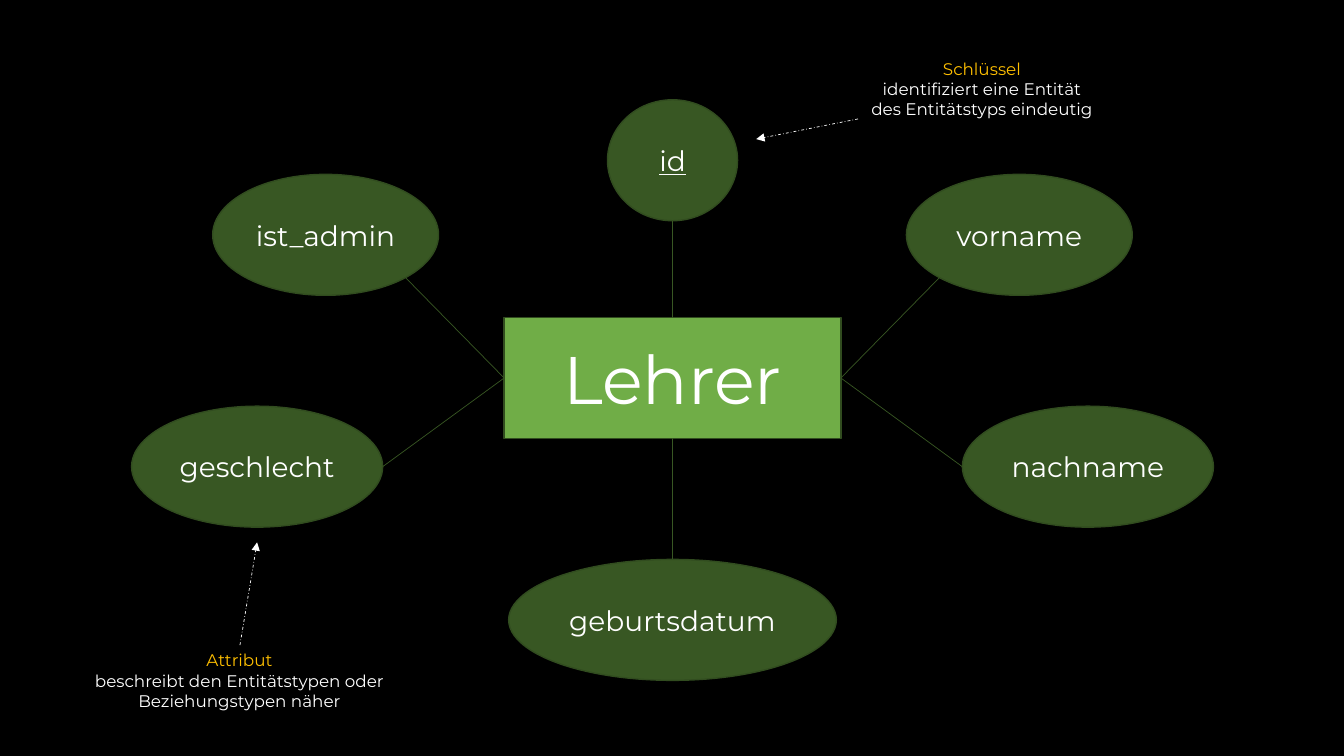
from math import cos, radians, sin

from pptx import Presentation
from pptx.dml.color import RGBColor
from pptx.enum.dml import MSO_LINE_DASH_STYLE as Dash
from pptx.enum.shapes import MSO_CONNECTOR as Connector, MSO_SHAPE as Shape
from pptx.enum.text import MSO_ANCHOR as Anchor, PP_ALIGN as Align
from pptx.oxml.ns import qn
from pptx.util import Inches, Pt
from lxml.etree import SubElement

# Content, lengths in inches
CENTER_X = 6.67
ENTITY = {"name": "Lehrer", "middle": 3.75, "width": 3.34}
BOX_HEIGHT = 1.2

# Name, offset from the center line, middle, width, is key,
# angle where the line leaves the ellipse (clockwise from the right), entity side
ATTRIBUTES = [
    ("id", 0, 1.59, 1.29, True, 90, "top"),
    ("vorname", 3.44, 2.33, 2.24, False, 135, "right"),
    ("geschlecht", -4.12, 4.63, 2.49, False, 0, "left"),
    ("geburtsdatum", 0, 6.15, 3.25, False, 270, "bottom"),
    ("nachname", 4.12, 4.63, 2.49, False, 180, "right"),
    ("ist_admin", -3.44, 2.33, 2.24, False, 45, "left"),
]

# Term, explanation, box (left, top, width, height), arrow start, arrow end
NOTES = [
    ("Attribut", "beschreibt den Entitätstypen oder Beziehungstypen näher",
     (0.25, 6.4, 4.25, 0.71), (2.38, 6.4), (2.55, 5.38)),
    ("Schlüssel", "identifiziert eine Entität des Entitätstyps eindeutig",
     (8.51, 0.53, 2.46, 0.71), (8.51, 1.18), (7.5, 1.38)),
]

THEME = {
    "font": "Montserrat",
    "background": RGBColor.from_string("000000"),
    "text": RGBColor.from_string("FFFFFF"),
    "term": RGBColor.from_string("FFC000"),
    "entity": RGBColor.from_string("70AD47"),
    "attribute": RGBColor.from_string("385723"),
    "outline": RGBColor.from_string("314C1F"),
    "entity_size": Pt(48),
    "attribute_size": Pt(20),
    "note_size": Pt(12),
    "outline_width": Pt(1),
    "line_width": Pt(0.5),
}


def write(para, text, size, color, underline=False):
    para.alignment = Align.CENTER
    span = para.add_run()
    span.text = text
    values = {"name": THEME["font"], "size": size, "underline": underline or None}
    for key, value in values.items():
        setattr(span.font, key, value)
    span.font.color.rgb = color


def add_box(page, kind, center, middle, width, fill, text, size, underline=False):
    box = page.shapes.add_shape(
        kind, Inches(center - width / 2), Inches(middle - BOX_HEIGHT / 2),
        Inches(width), Inches(BOX_HEIGHT))
    box.shadow.inherit = False
    box.fill.solid()
    box.fill.fore_color.rgb = fill
    box.line.color.rgb = THEME["outline"]
    box.line.width = THEME["outline_width"]
    box.text_frame.vertical_anchor = Anchor.MIDDLE
    box.text_frame.word_wrap = True
    write(box.text_frame.paragraphs[0], text, size, THEME["text"], underline)


def add_line(page, start, end, color, arrow=False):
    line = page.shapes.add_connector(
        Connector.STRAIGHT, *[Inches(value) for value in (*start, *end)])
    line.line.color.rgb = color
    line.line.width = THEME["line_width"]
    if arrow:
        line.line.dash_style = Dash.DASH_DOT
        SubElement(line.line._get_or_add_ln(), qn("a:tailEnd"), type="triangle")
    SubElement(line._element.spPr, qn("a:effectLst"))


def add_note(page, term, explanation, place):
    box = page.shapes.add_textbox(*[Inches(value) for value in place])
    frame = box.text_frame
    frame.word_wrap = True
    write(frame.paragraphs[0], term, THEME["note_size"], THEME["term"])
    write(frame.add_paragraph(), explanation, THEME["note_size"], THEME["text"])


def main():
    deck = Presentation()
    deck.slide_width, deck.slide_height = Inches(13.33), Inches(7.5)
    page = deck.slides.add_slide(deck.slide_layouts[6])
    page.background.fill.solid()
    page.background.fill.fore_color.rgb = THEME["background"]

    # Entity and the points where lines meet it
    middle, half = ENTITY["middle"], ENTITY["width"] / 2
    add_box(page, Shape.RECTANGLE, CENTER_X, middle, ENTITY["width"],
            THEME["entity"], ENTITY["name"], THEME["entity_size"])
    sides = {
        "top": (CENTER_X, middle - BOX_HEIGHT / 2),
        "bottom": (CENTER_X, middle + BOX_HEIGHT / 2),
        "left": (CENTER_X - half, middle),
        "right": (CENTER_X + half, middle),
    }

    # Attributes, each joined to the entity
    for name, offset, height, width, is_key, angle, side in ATTRIBUTES:
        center = CENTER_X + offset
        add_box(page, Shape.OVAL, center, height, width, THEME["attribute"],
                name, THEME["attribute_size"], is_key)
        edge = (center + width / 2 * cos(radians(angle)),
                height + BOX_HEIGHT / 2 * sin(radians(angle)))
        add_line(page, sides[side], edge, THEME["attribute"])

    # Notes with arrows
    for term, explanation, place, start, end in NOTES:
        add_line(page, start, end, THEME["text"], arrow=True)
        add_note(page, term, explanation, place)

    deck.save("out.pptx")


if __name__ == "__main__":
    main()
